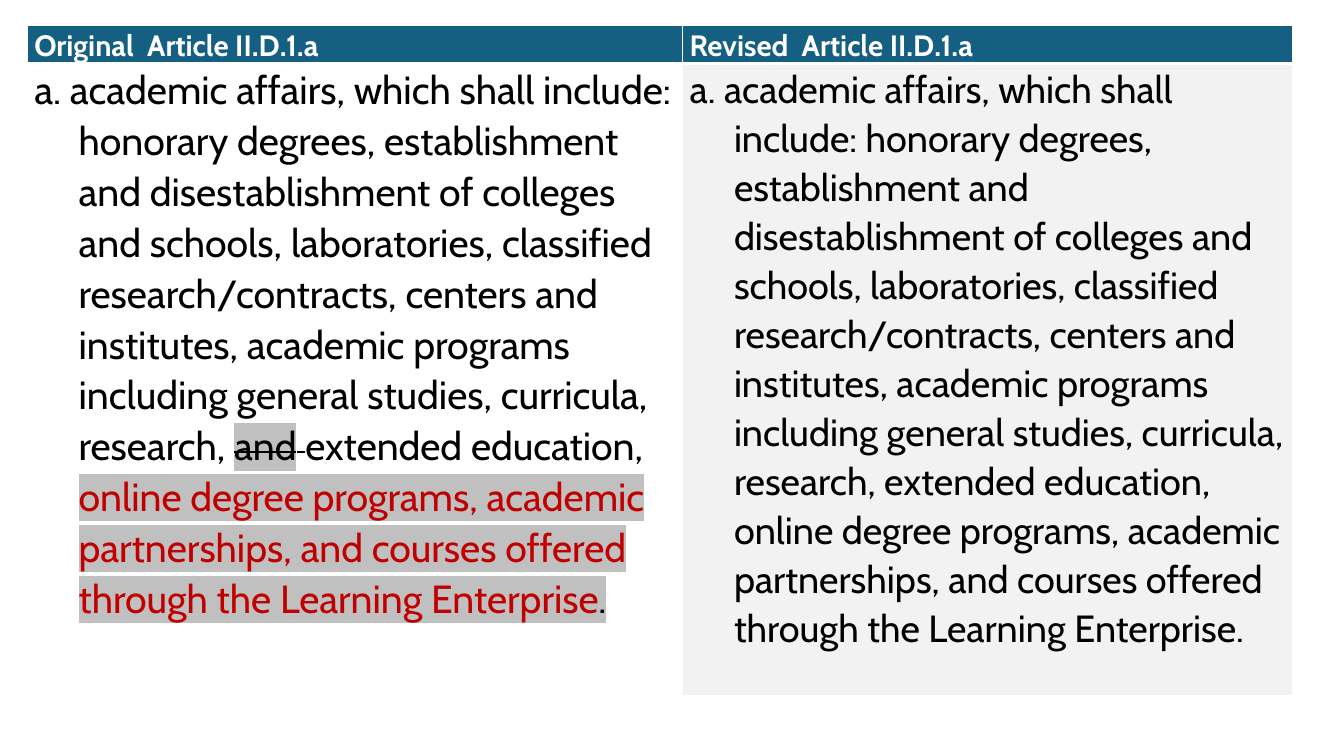
from lxml import etree
from pptx import Presentation
from pptx.dml.color import RGBColor
from pptx.oxml.ns import qn
from pptx.util import Inches, Pt

COLORS = {"white": "FFFFFF", "header": "156082", "panel": "F2F2F2",
          "text": "000000", "added": "C00000", "mark": "C0C0C0"}
FONT = "Cabin"

prs = Presentation()
prs.slide_width, prs.slide_height = Inches(13.33), Inches(7.5)
s = prs.slides.add_slide(prs.slide_layouts[6])


def add_solid_fill(parent, color):
    fill = etree.SubElement(parent, qn("a:solidFill"))
    etree.SubElement(fill, qn("a:srgbClr"), val=COLORS[color])


def add_run(p, text, size, color="text", bold=False, mark=False, strike=False):
    r = p.add_run()
    r.text = text
    r.font.size, r.font.bold = Pt(size), bold
    r.font.color.rgb = RGBColor.from_string(COLORS[color])
    rPr = r.font._element
    if mark:
        highlight = etree.SubElement(rPr, qn("a:highlight"))
        etree.SubElement(highlight, qn("a:srgbClr"), val=COLORS["mark"])
    if strike:
        rPr.set("strike", "sngStrike")
    r.font.name = FONT


# Wording shared by both versions
shared = ("a. academic affairs, which shall include: honorary degrees, "
          "establishment and disestablishment of colleges and schools, "
          "laboratories, classified research/contracts, centers and institutes, "
          "academic programs including general studies, curricula, research, ")
extended = "extended education, "
added = ("online degree programs, academic partnerships, and courses offered "
         "through the Learning Enterprise")

# Runs of each cell: text, size and formatting
header = {"size": 21, "color": "white", "bold": True}
rows = [
    [[("Original  Article II.D.1.a", header)],
     [("Revised  Article II.D.1.a", header)]],
    [[(shared, {"size": 28}),
      ("and", {"size": 28, "mark": True, "strike": True}),
      (" ", {"size": 28, "strike": True}),
      (extended, {"size": 28}),
      (added, {"size": 28, "color": "added", "mark": True}),
      (".", {"size": 28, "mark": True})],
     [(shared + extended + added + ".", {"size": 27})]],
]
fills = [["header", "header"], ["white", "panel"]]

# Comparison table
table = s.shapes.add_table(2, 2, Inches(0.27), Inches(0.25),
                           Inches(12.55), Inches(6.64)).table
for col, width in zip(table.columns, (6.5, 6.05)):
    col.width = Inches(width)
for row, height in zip(table.rows, (0.37, 6.27)):
    row.height = Inches(height)

for i, row in enumerate(rows):
    for j, runs in enumerate(row):
        cell = table.cell(i, j)
        cell.margin_left = cell.margin_right = Inches(0.07)
        cell.margin_top = cell.margin_bottom = 0
        p = cell.text_frame.paragraphs[0]
        p.line_spacing = 1.07
        for text, style in runs:
            add_run(p, text, **style)

        # Hanging indent for the body text
        if i == 1:
            pPr = p._p.get_or_add_pPr()
            pPr.set("marL", str(Inches(0.44)))
            pPr.set("indent", str(-Inches(0.44)))

        # White borders, thicker between header and body
        tcPr = cell._tc.get_or_add_tcPr()
        for side in "LRTB":
            thick = (i, side) in ((0, "B"), (1, "T"))
            ln = etree.SubElement(tcPr, qn(f"a:ln{side}"),
                                  w=str(Pt(3 if thick else 1)))
            add_solid_fill(ln, "white")
        add_solid_fill(tcPr, fills[i][j])

prs.save("out.pptx")
